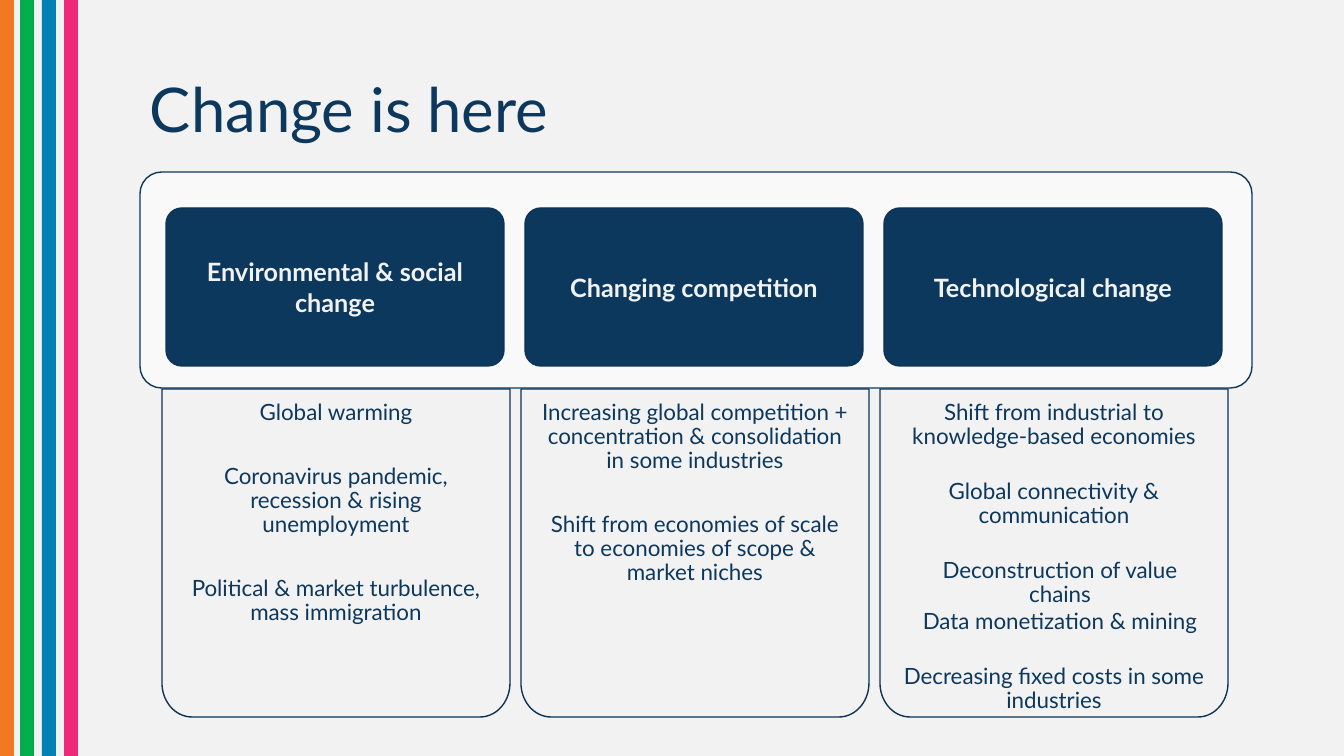
from math import cos, radians, sin

from pptx import Presentation
from pptx.dml.color import RGBColor
from pptx.enum.shapes import MSO_SHAPE as Preset
from pptx.enum.text import MSO_ANCHOR as Anchor, PP_ALIGN as Align
from pptx.util import Inches, Pt

COLORS = {
    "background": "F2F2F2", "navy": "0D385E", "outline": "0D3355", "frame": "F9F9F9",
    "orange": "F07921", "green": "01AD4B", "blue": "0281B4", "pink": "EE297B",
}
STRIPES = [(0, "orange"), (20, "green"), (42, "blue"), (64, "pink")]
WIDE, MEDIUM, TIGHT = 28.4, 21.8, 2.4
COLUMNS = [
    ("Environmental & social change", [
        ("Global warming", 0, 0),
        ("Coronavirus pandemic, recession & rising unemployment", WIDE, 0),
        ("Political & market turbulence, mass immigration", WIDE, 0),
    ]),
    ("Changing competition", [
        ("Increasing global competition + concentration & consolidation in some industries", 0, 0),
        ("Shift from economies of scale to economies of scope & market niches", WIDE, 0),
    ]),
    ("Technological change", [
        ("Shift from industrial to knowledge-based economies", 0, 0),
        ("Global connectivity & communication", MEDIUM, 0),
        ("Deconstruction of value chains", MEDIUM, 12),
        ("Data monetization & mining", TIGHT, 12),
        ("Decreasing fixed costs in some industries", MEDIUM, 0),
    ]),
]
COLUMN_STEP = 359


def px(length):
    return round(length * Inches(1) / 100.8)


def rgb(name):
    return RGBColor.from_string(COLORS[name])


class ChangeSlide:
    """Draws styled elements on one slide, with lengths in px."""

    def __init__(self, deck, font="Lato"):
        self.slide = deck.slides.add_slide(deck.slide_layouts[6])
        self.font = font
        self.slide.background.fill.solid()
        self.slide.background.fill.fore_color.rgb = rgb("background")

    def paint(self, shape, fill, line=None):
        shape.shadow.inherit = False
        shape.fill.solid()
        shape.fill.fore_color.rgb = rgb(fill)
        if line:
            shape.line.color.rgb = rgb(line)
            shape.line.width = Pt(1)
        else:
            shape.line.fill.background()

    def style(self, paragraph, size, color, bold=False, align=Align.CENTER):
        paragraph.alignment = align
        paragraph.font.name = self.font
        paragraph.font.size = Pt(size)
        paragraph.font.bold = bold
        paragraph.font.color.rgb = rgb(color)

    def block(self, preset, left, top, width, height, fill, line=None):
        shape = self.slide.shapes.add_shape(preset, px(left), px(top), px(width), px(height))
        if preset == Preset.ROUNDED_RECTANGLE:
            shape.adjustments[0] = 0.1
        self.paint(shape, fill, line)
        return shape

    def title(self, text, left, top, width, height):
        frame = self.slide.shapes.add_textbox(px(left), px(top), px(width), px(height)).text_frame
        frame.word_wrap = True
        frame.vertical_anchor = Anchor.MIDDLE
        heading = frame.paragraphs[0]
        heading.text = text
        heading.line_spacing = 0.9
        self.style(heading, 44, "navy", align=Align.LEFT)

    def card(self, text, left, top, width, height):
        frame = self.block(Preset.ROUNDED_RECTANGLE, left, top, width, height,
                           "navy", "outline").text_frame
        frame.vertical_anchor = Anchor.MIDDLE
        frame.paragraphs[0].text = text
        self.style(frame.paragraphs[0], 18, "background", bold=True)

    def panel(self, points, left, top, width, height, radius_x=30, radius_y=34):
        right, bottom = left + width, top + height
        corners = [(right - radius_x, range(0, 91, 5)), (left + radius_x, range(90, 181, 5))]
        curve = [(px(center + radius_x * cos(radians(angle))),
                  px(bottom - radius_y + radius_y * sin(radians(angle))))
                 for center, angles in corners for angle in angles]
        outline = self.slide.shapes.build_freeform(px(left), px(top))
        outline.add_line_segments([(px(right), px(top))] + curve, close=True)
        shape = outline.convert_to_shape()
        self.paint(shape, "background", "outline")
        frame = shape.text_frame
        frame.word_wrap = True
        frame.vertical_anchor = Anchor.TOP
        frame.margin_left = frame.margin_right = frame.margin_bottom = px(20)
        frame.margin_top = px(12)
        for index, (text, gap, indent) in enumerate(points):
            point = frame.add_paragraph() if index else frame.paragraphs[0]
            point.text = text
            point.line_spacing = 0.9
            point.space_before = Pt(gap)
            if indent:
                point._p.get_or_add_pPr().set("marL", str(px(indent)))
            self.style(point, 16, "navy")


def main():
    deck = Presentation()
    deck.slide_width, deck.slide_height = px(1344), px(756)
    page = ChangeSlide(deck)
    for left, color in STRIPES:
        page.block(Preset.RECTANGLE, left, 0, 14, 756, color)
    page.title("Change is here", 140, 40, 883, 146)
    page.block(Preset.ROUNDED_RECTANGLE, 140, 172, 1112, 216, "frame", "navy")
    for index, (heading, points) in enumerate(COLUMNS):
        offset = index * COLUMN_STEP
        page.card(heading, 166 + offset, 208, 338, 158)
        page.panel(points, 162 + offset, 389, 348, 328)
    deck.save("out.pptx")


if __name__ == "__main__":
    main()
